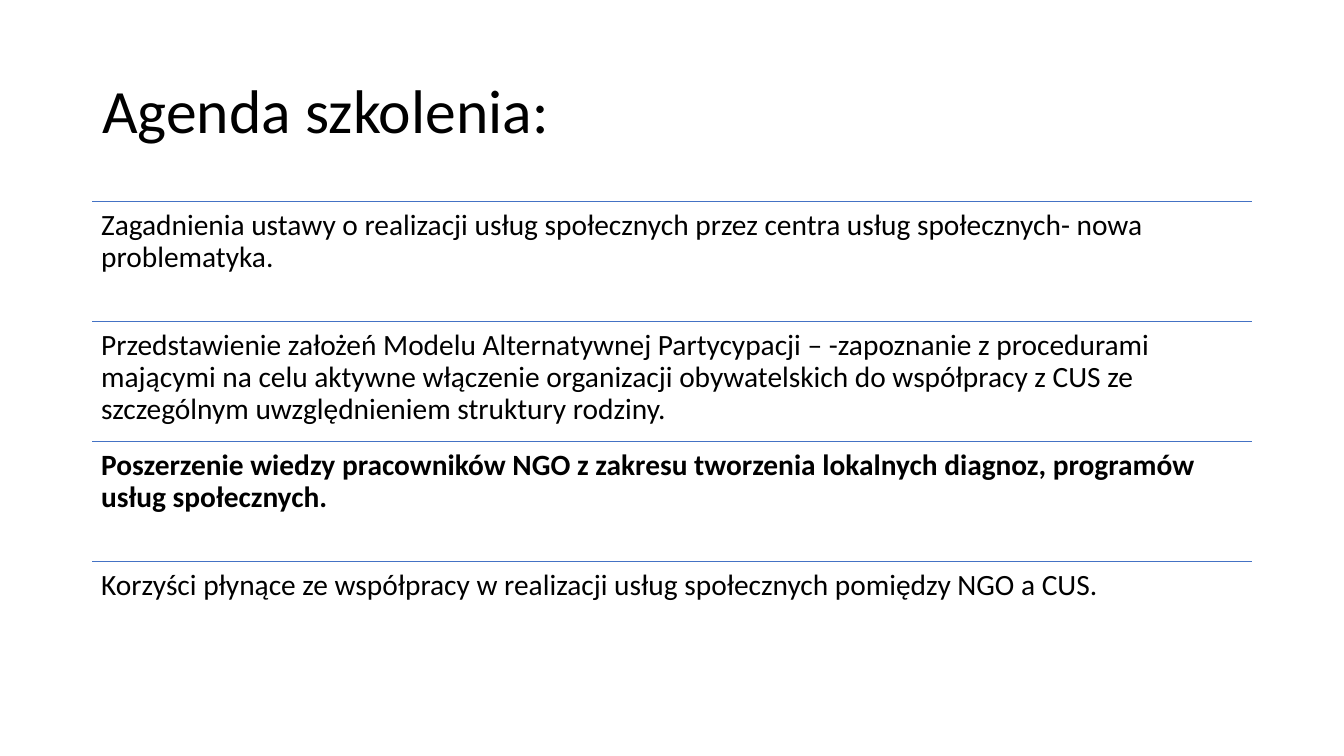
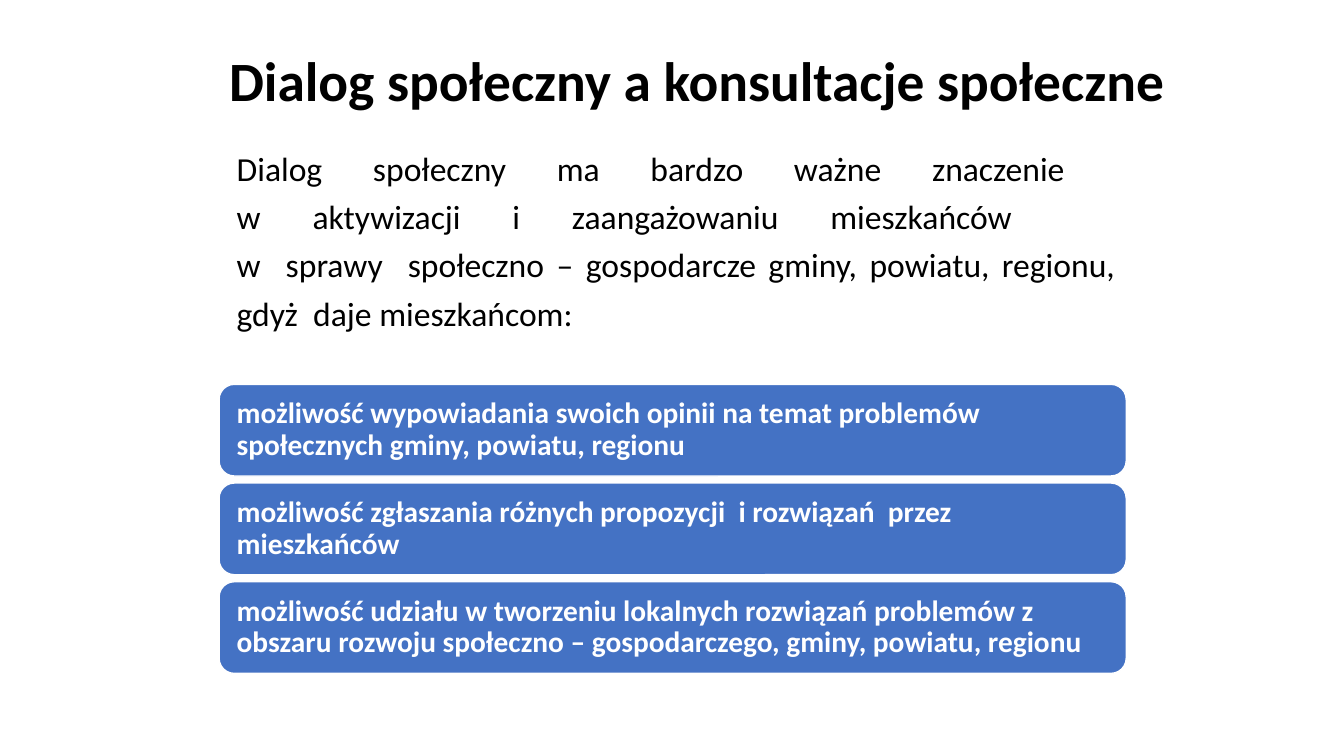
from dataclasses import dataclass

from lxml import etree
from pptx import Presentation
from pptx.dml.color import RGBColor
from pptx.enum.shapes import MSO_CONNECTOR, MSO_SHAPE
from pptx.enum.text import MSO_ANCHOR, PP_ALIGN
from pptx.oxml.ns import qn
from pptx.util import Pt

TOP, MIDDLE = MSO_ANCHOR.TOP, MSO_ANCHOR.MIDDLE
LEFT, JUSTIFY = PP_ALIGN.LEFT, PP_ALIGN.JUSTIFY
STRAIGHT = MSO_CONNECTOR.STRAIGHT
ROUNDED = MSO_SHAPE.ROUNDED_RECTANGLE


@dataclass(frozen=True)
class Theme:
    font: str = "Calibri"
    ink: RGBColor = RGBColor(0x00, 0x00, 0x00)
    paper: RGBColor = RGBColor(0xFF, 0xFF, 0xFF)
    accent: RGBColor = RGBColor(0x44, 0x72, 0xC4)
    title_size: float = 44
    long_title_size: float = 39.6
    body_size: float = 24
    item_size: float = 21
    tight: float = 0.9
    loose: float = 1.2
    rule_width: float = 1
    item_inset: float = 6.3
    card_inset: float = 9.4


THEME = Theme()

AGENDA = [
    ("Zagadnienia ustawy o realizacji usług społecznych przez centra usług "
     "społecznych- nowa problematyka.", False),
    ("Przedstawienie założeń Modelu Alternatywnej Partycypacji – -zapoznanie z "
     "procedurami mającymi na celu aktywne włączenie organizacji obywatelskich do "
     "współpracy z CUS ze szczególnym uwzględnieniem struktury rodziny.", False),
    ("Poszerzenie wiedzy pracowników NGO z zakresu tworzenia lokalnych diagnoz, "
     "programów usług społecznych.", True),
    ("Korzyści płynące ze współpracy w realizacji usług społecznych pomiędzy "
     "NGO a CUS.", False),
]

DIALOGUE = (
    "Dialog społeczny ma bardzo ważne znaczenie \n"
    "w aktywizacji i zaangażowaniu mieszkańców  \n"
    "w  sprawy  społeczno – gospodarcze gminy, powiatu, regionu, "
    "gdyż  daje mieszkańcom:"
)

OPPORTUNITIES = [
    "możliwość wypowiadania swoich opinii na temat problemów społecznych gminy, "
    "powiatu, regionu",
    "możliwość zgłaszania różnych propozycji  i rozwiązań  przez mieszkańców",
    "możliwość udziału w tworzeniu lokalnych rozwiązań problemów z obszaru rozwoju "
    "społeczno – gospodarczego, gminy, powiatu, regionu",
]


def write(box, text, size, color=THEME.ink, bold=False, anchor=TOP,
          align=LEFT, spacing=THEME.tight, inset=None):
    """Fill a box with one formatted paragraph."""
    frame = box.text_frame
    frame.word_wrap = True
    frame.vertical_anchor = anchor
    if inset is not None:
        frame.margin_left = frame.margin_right = Pt(inset)
        frame.margin_top = frame.margin_bottom = Pt(inset)
    para = frame.paragraphs[0]
    para.text = text
    para.alignment = align
    para.line_spacing = spacing
    for span in para.runs:
        span.font.name = THEME.font
        span.font.size = Pt(size)
        span.font.bold = bold
        span.font.color.rgb = color


def add_text(page, area, text, size, **style):
    box = page.shapes.add_textbox(*map(Pt, area))
    write(box, text, size, **style)


def add_title(page, area, text, size=THEME.title_size, bold=False):
    add_text(page, area, text, size, bold=bold, anchor=MIDDLE)


def add_rule(page, left, top, width):
    rule = page.shapes.add_connector(
        STRAIGHT, Pt(left), Pt(top), Pt(left + width), Pt(top))
    rule.line.color.rgb = THEME.accent
    rule.line.width = Pt(THEME.rule_width)
    etree.SubElement(rule._element.spPr, qn("a:effectLst"))


def add_card(page, area, text):
    card = page.shapes.add_shape(ROUNDED, *map(Pt, area))
    card.shadow.inherit = False
    card.fill.solid()
    card.fill.fore_color.rgb = THEME.accent
    card.line.color.rgb = THEME.paper
    card.line.width = Pt(THEME.rule_width)
    write(card, text, THEME.item_size, color=THEME.paper, bold=True,
          anchor=MIDDLE, inset=THEME.card_inset)


def build_agenda(page):
    left, top, width, row_height = 66, 144, 828, 85.7
    add_title(page, (left, 28.8, width, 104.4), "Agenda szkolenia:")

    # Ruled agenda rows
    for index, (text, bold) in enumerate(AGENDA):
        row_top = top + index * row_height
        add_rule(page, left, row_top, width)
        add_text(page, (left, row_top, width, row_height), text,
                 THEME.item_size, bold=bold, inset=THEME.item_inset)


def build_dialogue(page):
    left, top, width, height, gap = 156.5, 274.5, 648, 65.5, 5
    add_title(page, (left, 24, 702, 72), "Dialog społeczny a konsultacje społeczne",
              size=THEME.long_title_size, bold=True)

    # Introduction
    add_text(page, (162, 96, 642, 147), DIALOGUE, THEME.body_size,
             align=JUSTIFY, spacing=THEME.loose)

    # Stacked cards
    for index, text in enumerate(OPPORTUNITIES):
        card_top = top + index * (height + gap)
        add_card(page, (left, card_top, width, height), text)


def main():
    deck = Presentation()
    deck.slide_width, deck.slide_height = Pt(960), Pt(540)
    blank = deck.slide_layouts[6]
    for build in (build_agenda, build_dialogue):
        page = deck.slides.add_slide(blank)
        page.background.fill.solid()
        page.background.fill.fore_color.rgb = THEME.paper
        build(page)
    deck.save("out.pptx")


if __name__ == "__main__":
    main()
